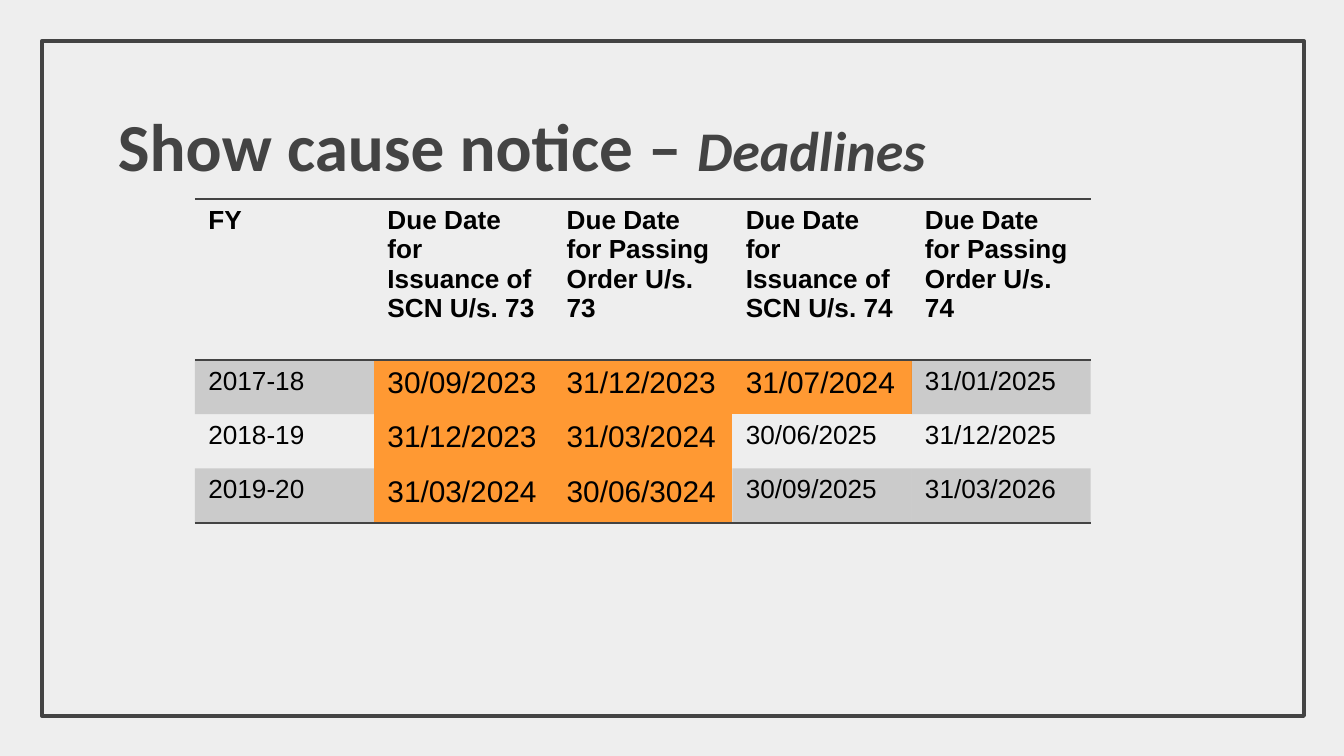
import lxml.etree
import pptx
import pptx.dml.color
import pptx.enum.shapes
import pptx.enum.text
import pptx.oxml.ns
import pptx.util

Pt = pptx.util.Pt
qn = pptx.oxml.ns.qn
BACKGROUND = pptx.dml.color.RGBColor(0xEE, 0xEE, 0xEE)
DARK = pptx.dml.color.RGBColor(0x43, 0x43, 0x43)
BAND = pptx.dml.color.RGBColor(0x43, 0x43, 0x43)
ORANGE = pptx.dml.color.RGBColor(0xFF, 0x99, 0x33)
BLACK = pptx.dml.color.RGBColor(0, 0, 0)
NO_STYLE = "{2D5ABB26-0587-4C30-8999-92F81FD0307C}"


def add_text(paragraph, text, *, size, font="Arial", color=BLACK, bold=False, italic=False):
    run = paragraph.add_run()
    run.text = text
    run.font.name = font
    run.font.size = Pt(size)
    run.font.color.rgb = color
    run.font.bold = bold
    run.font.italic = italic


def add_border(cell, side):
    """Draw a 1 pt line on one side: lnT for top, lnB for bottom."""
    line = lxml.etree.SubElement(cell._tc.get_or_add_tcPr(), qn(f"a:{side}"), w=str(Pt(1)))
    fill = lxml.etree.SubElement(line, qn("a:solidFill"))
    lxml.etree.SubElement(fill, qn("a:srgbClr"), val=str(DARK))


presentation = pptx.Presentation()
presentation.slide_width = Pt(720)
presentation.slide_height = Pt(405)
slide = presentation.slides.add_slide(presentation.slide_layouts[5])
slide.background.fill.solid()
slide.background.fill.fore_color.rgb = BACKGROUND

# Title
title = slide.shapes.title
title.left, title.top, title.width, title.height = Pt(56), Pt(48.4), Pt(608), Pt(58)
frame = title.text_frame
frame.margin_left = frame.margin_right = frame.margin_top = frame.margin_bottom = Pt(7.2)
frame.vertical_anchor = pptx.enum.text.MSO_ANCHOR.MIDDLE
frame.auto_size = pptx.enum.text.MSO_AUTO_SIZE.NONE
paragraph = frame.paragraphs[0]
paragraph.alignment = pptx.enum.text.PP_ALIGN.LEFT
add_text(paragraph, "Show cause notice – ", size=36, font="Calibri", color=DARK, bold=True)
add_text(paragraph, "Deadlines", size=30, font="Calibri", color=DARK, bold=True, italic=True)

# Frame around the slide
border = slide.shapes.add_shape(
    pptx.enum.shapes.MSO_SHAPE.RECTANGLE, Pt(22.5), Pt(22), Pt(676), Pt(361.5))
border.shadow.inherit = False
border.fill.background()
border.line.color.rgb = DARK
border.line.width = Pt(2.25)

# Deadlines table
rows = [
    ["FY", "Due Date for Issuance of SCN U/s. 73", "Due Date for Passing Order U/s. 73",
     "Due Date for Issuance of SCN U/s. 74", "Due Date for Passing Order U/s. 74"],
    ["2017-18", "30/09/2023", "31/12/2023", "31/07/2024", "31/01/2025"],
    ["2018-19", "31/12/2023", "31/03/2024", "30/06/2025", "31/12/2025"],
    ["2019-20", "31/03/2024", "30/06/3024", "30/09/2025", "31/03/2026"],
]
highlighted = {(1, 1), (1, 2), (1, 3), (2, 1), (2, 2), (3, 1), (3, 2)}
row_heights = [86.2, 29.1, 29.1, 29.1]

table = slide.shapes.add_table(
    len(rows), len(rows[0]), Pt(104.4), Pt(106.6), Pt(480), Pt(sum(row_heights))).table
table.first_row = False
table.horz_banding = False
table._tbl.tblPr.find(qn("a:tableStyleId")).text = NO_STYLE
for column in table.columns:
    column.width = Pt(96)

for row_index, (values, height) in enumerate(zip(rows, row_heights)):
    table.rows[row_index].height = Pt(height)
    for column_index, value in enumerate(values):
        cell = table.cell(row_index, column_index)
        is_header = row_index == 0
        is_highlighted = (row_index, column_index) in highlighted
        add_text(cell.text_frame.paragraphs[0], value,
                 size=16 if is_highlighted else 14, bold=is_header)
        if is_header:
            add_border(cell, "lnT")
        if row_index in (0, len(rows) - 1):
            add_border(cell, "lnB")
        if is_highlighted:
            cell.fill.solid()
            cell.fill.fore_color.rgb = ORANGE
        elif row_index % 2:
            cell.fill.solid()
            cell.fill.fore_color.rgb = BAND
            color = cell._tc.tcPr.find(qn("a:solidFill")).find(qn("a:srgbClr"))
            lxml.etree.SubElement(color, qn("a:alpha"), val="20000")
        else:
            cell.fill.background()

presentation.save("out.pptx")
